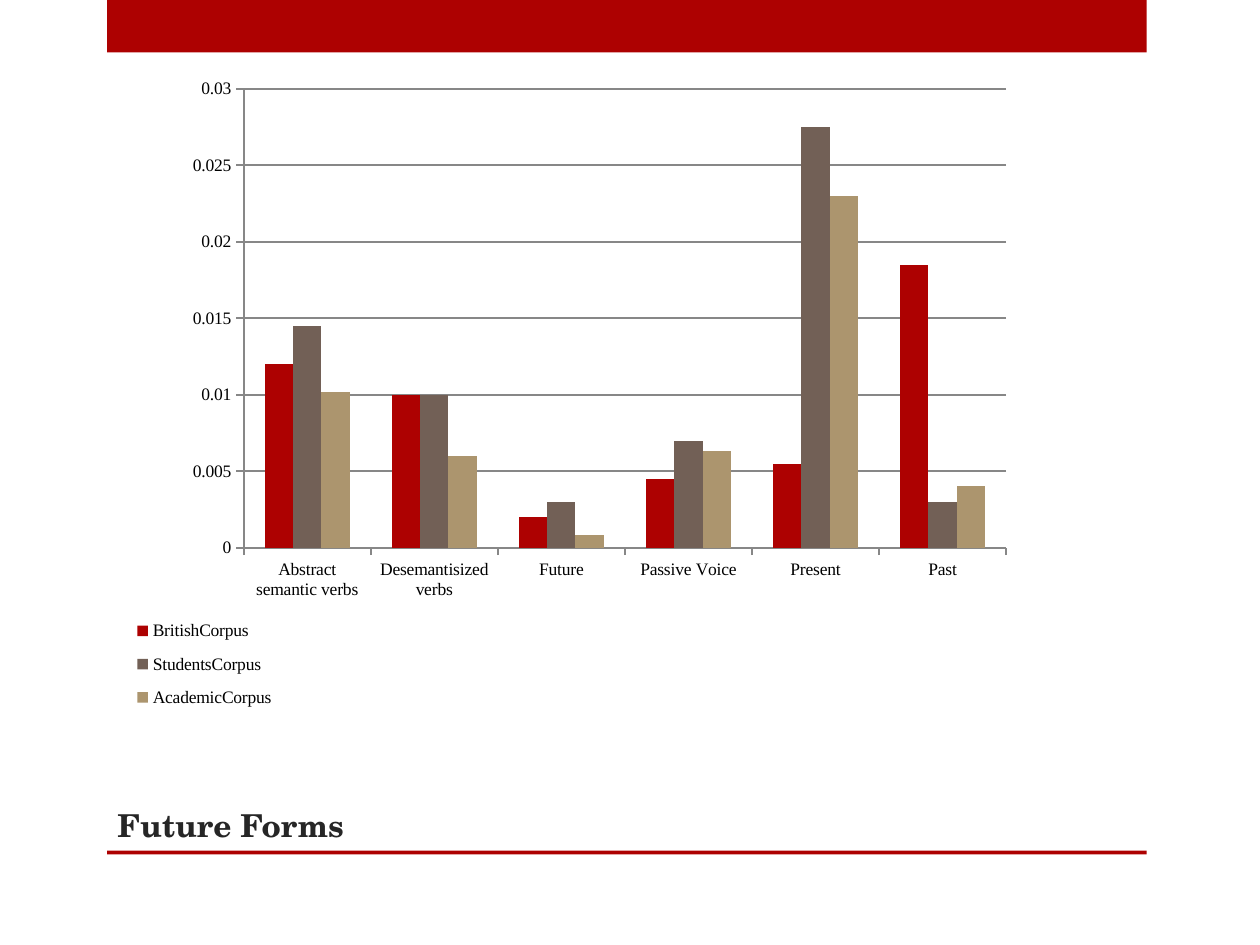
from lxml.etree import SubElement
from pptx import Presentation
from pptx.chart.data import CategoryChartData
from pptx.dml.color import RGBColor
from pptx.enum.chart import XL_CHART_TYPE, XL_LEGEND_POSITION, XL_TICK_MARK
from pptx.enum.shapes import MSO_SHAPE
from pptx.enum.text import MSO_ANCHOR
from pptx.oxml.ns import qn
from pptx.util import Pt

COLORS = {
    "red": "AD0101",
    "brown": "726056",
    "tan": "AC956E",
    "axis": "878787",
    "title": "262626",
    "label": "000000",
}


def color(name):
    return RGBColor.from_string(COLORS[name])


def place(part, position, **settings):
    layout = part.find(qn("c:layout"))
    if layout is None:
        layout = SubElement(part, qn("c:layout"))
    part.insert(position, layout)
    manual = SubElement(layout, qn("c:manualLayout"))
    for tag, value in settings.items():
        SubElement(manual, qn(f"c:{tag}")).set("val", str(value))


prs = Presentation()
prs.slide_width, prs.slide_height = Pt(720), Pt(540)
slide = prs.slides.add_slide(prs.slide_layouts[6])

for top, height in ((0, 30), (486, 2.3)):
    band = slide.shapes.add_shape(MSO_SHAPE.RECTANGLE, Pt(61.2), Pt(top), Pt(594), Pt(height))
    band.shadow.inherit = False
    band.fill.solid()
    band.fill.fore_color.rgb = color("red")
    band.line.fill.background()

title = slide.shapes.add_textbox(Pt(60), Pt(451.5), Pt(534), Pt(34.5)).text_frame
title.word_wrap = True
title.vertical_anchor = MSO_ANCHOR.BOTTOM
heading = title.paragraphs[0].add_run()
heading.text = "Future Forms"
heading.font.name = "TeX Gyre Schola"
heading.font.size = Pt(18)
heading.font.bold = True
heading.font.color.rgb = color("title")

corpora = (
    ("BritishCorpus", "red", (0.012, 0.01, 0.002, 0.0045, 0.0055, 0.0185)),
    ("StudentsCorpus", "brown", (0.0145, 0.01, 0.003, 0.007, 0.0275, 0.003)),
    ("AcademicCorpus", "tan", (0.0102, 0.006, 0.0008, 0.0063, 0.023, 0.004)),
)
frequencies = CategoryChartData()
frequencies.categories = [
    "Abstract semantic verbs", "Desemantisized verbs", "Future",
    "Passive Voice", "Present", "Past",
]
for name, fill, values in corpora:
    frequencies.add_series(name, values)

chart = slide.shapes.add_chart(
    XL_CHART_TYPE.COLUMN_CLUSTERED, Pt(36.7), Pt(31.7), Pt(640.8), Pt(380.2), frequencies
).chart
chart.has_title = False
chart.font.name = "Times New Roman"
chart.font.size = Pt(10)
chart.font.color.rgb = color("label")

plot = chart.plots[0]
plot.gap_width = 150
plot.overlap = 0
plot.vary_by_categories = False
for series, (name, fill, values) in zip(plot.series, corpora):
    series.format.fill.solid()
    series.format.fill.fore_color.rgb = color(fill)
    series.invert_if_negative = False

scale = chart.value_axis
scale.minimum_scale, scale.maximum_scale, scale.major_unit = 0, 0.03, 0.005
scale.has_major_gridlines = True
for axis in (chart.category_axis, scale):
    axis.major_tick_mark = XL_TICK_MARK.OUTSIDE
    axis.minor_tick_mark = XL_TICK_MARK.NONE
for line in (chart.category_axis.format.line, scale.format.line, scale.major_gridlines.format.line):
    line.color.rgb = color("axis")
    line.width = Pt(1)

chart.has_legend = True
chart.legend.position = XL_LEGEND_POSITION.RIGHT
chart.legend.include_in_layout = False
place(chart.legend._element, 1, xMode="edge", yMode="edge", x=0.04, y=0.83, w=0.17, h=0.18)
place(
    chart._chartSpace.chart.plotArea, 0, layoutTarget="inner", xMode="edge", yMode="edge",
    x=0.16, y=0.05, w=0.68, h=0.69,
)

prs.save("out.pptx")
